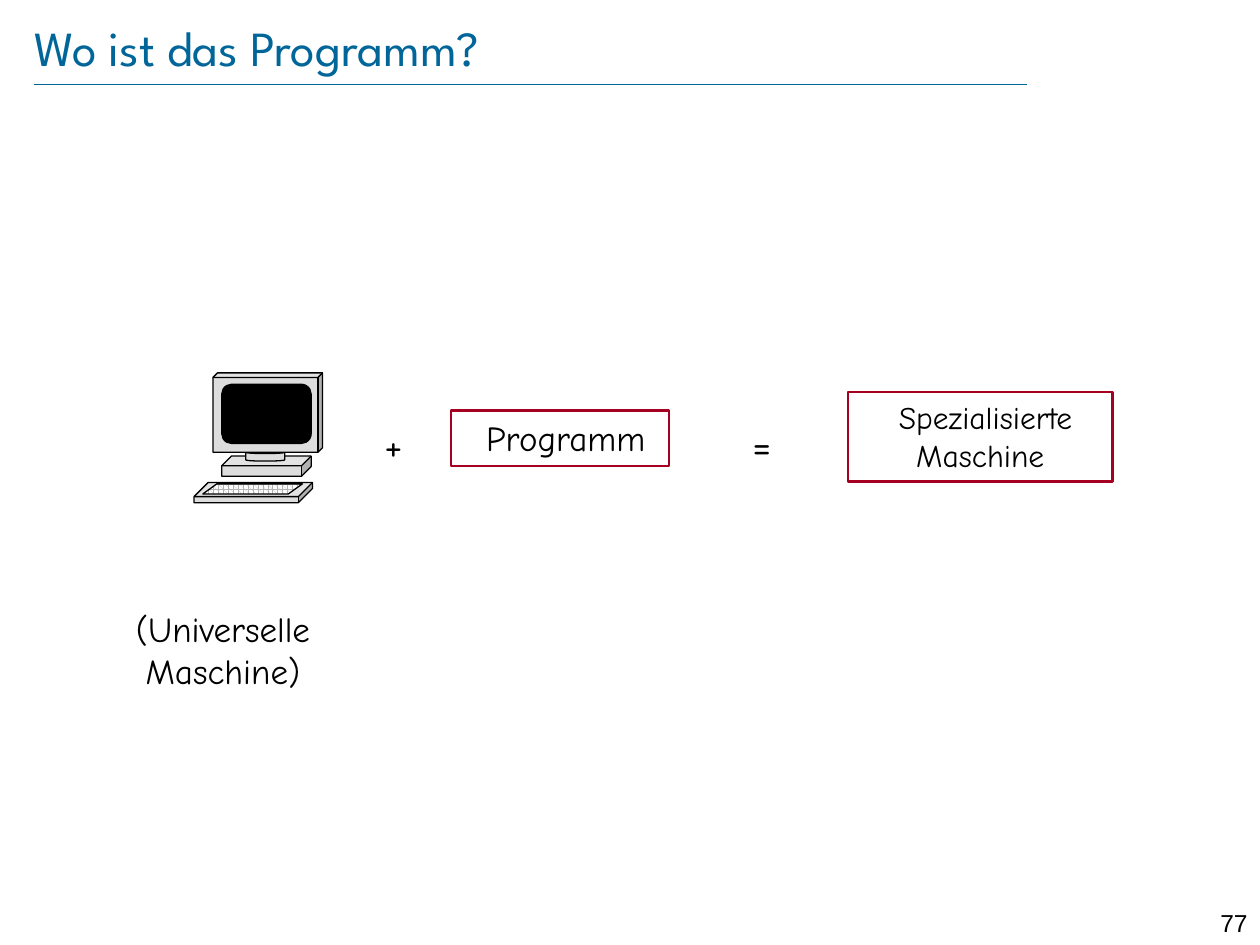
from lxml import etree
from pptx import Presentation
from pptx.dml.color import RGBColor
from pptx.enum.dml import MSO_PATTERN
from pptx.enum.shapes import MSO_CONNECTOR, MSO_SHAPE
from pptx.enum.text import MSO_ANCHOR, PP_ALIGN
from pptx.oxml.ns import qn
from pptx.util import Inches, Pt

CUBE, CAN, RECT = MSO_SHAPE.CUBE, MSO_SHAPE.CAN, MSO_SHAPE.RECTANGLE
ROUNDED, SLANTED = MSO_SHAPE.ROUNDED_RECTANGLE, MSO_SHAPE.PARALLELOGRAM
LEFT, CENTER, RIGHT = PP_ALIGN.LEFT, PP_ALIGN.CENTER, PP_ALIGN.RIGHT
TOP, MIDDLE = MSO_ANCHOR.TOP, MSO_ANCHOR.MIDDLE
BLUE, RED, GREY, BLACK = "006699", "A50021", "DDDDDD", "000000"


def color(value):
    return RGBColor.from_string(value)


def write(holder, text, size, font="Comic Neue", ink=BLACK, align=CENTER, anchor=TOP, wrap=True):
    frame = holder.text_frame
    frame.word_wrap = wrap
    frame.vertical_anchor = anchor
    paragraph = frame.paragraphs[0]
    paragraph.alignment = align
    run = paragraph.add_run()
    run.text = text
    for name, value in {"name": font, "size": Pt(size)}.items():
        setattr(run.font, name, value)
    run.font.color.rgb = color(ink)
    return frame


deck = Presentation()
deck.slide_width, deck.slide_height = Inches(10), Inches(7.5)
slide = deck.slides.add_slide(deck.slide_layouts[6])
shapes = slide.shapes

rule = shapes.add_connector(MSO_CONNECTOR.STRAIGHT, Inches(0.27), Inches(0.67), Inches(8.15), Inches(0.67))
rule.line.color.rgb = color(BLUE)
rule.line.width = Pt(0.25)
etree.SubElement(rule.element.spPr, qn("a:effectLst"))

page = shapes.add_textbox(Inches(9.45), Inches(7.16), Inches(0.55), Inches(0.24))
write(page, "77", 14, font="Arial", align=RIGHT)

title = shapes.add_textbox(Inches(0.27), Inches(0.13), Inches(8.69), Inches(0.48))
title_frame = write(title, "Wo ist das Programm?", 28, font="League Spartan", ink=BLUE, align=LEFT, anchor=MIDDLE)
for side in ("left", "top", "right", "bottom"):
    setattr(title_frame, f"margin_{side}", 0)

computer = shapes.add_group_shape()
computer_parts = [
    (CUBE, 1.76, 3.62, 0.71, 0.16, 0.478, GREY),
    (CAN, 1.95, 3.58, 0.31, 0.08, 0.25, GREY),
    (CUBE, 1.69, 2.96, 0.87, 0.63, 0.058, GREY),
    (ROUNDED, 1.76, 3.05, 0.71, 0.47, 0.167, BLACK),
    (CUBE, 1.54, 3.83, 0.94, 0.16, 0.7, GREY),
    (SLANTED, 1.61, 3.84, 0.79, 0.08, 1.391, None),
]
for kind, left, top, width, height, adjustment, fill in computer_parts:
    part = computer.shapes.add_shape(kind, Inches(left), Inches(top), Inches(width), Inches(height))
    part.shadow.inherit = False
    part.adjustments[0] = adjustment
    if fill:
        part.fill.solid()
        part.fill.fore_color.rgb = color(fill)
    else:
        part.fill.patterned()
        part.fill.pattern = MSO_PATTERN.SPHERE
        part.fill.fore_color.rgb = color("B2B2B2")
        part.fill.back_color.rgb = color("FFFFFF")
    part.line.color.rgb = color(BLACK)
    part.line.width = Pt(0.75)

for text, size, left, top, width, height in [
    (" Programm", 20, 3.58, 3.26, 1.73, 0.44),
    (" Spezialisierte Maschine", 18, 6.73, 3.11, 2.1, 0.71),
]:
    frame_box = shapes.add_shape(RECT, Inches(left), Inches(top), Inches(width), Inches(height))
    frame_box.shadow.inherit = False
    frame_box.fill.background()
    frame_box.line.color.rgb = color(RED)
    frame_box.line.width = Pt(1.5)
    write(frame_box, text, size)

machine = shapes.add_textbox(Inches(0.43), Inches(4.77), Inches(2.68), Inches(0.77))
write(machine, "(Universelle Maschine)", 20)

for sign, left in [("+", 2.95), ("=", 5.87)]:
    operator = shapes.add_textbox(Inches(left), Inches(3.27), Inches(0.31), Inches(0.4))
    write(operator, sign, 24, wrap=False)

deck.save("out.pptx")
